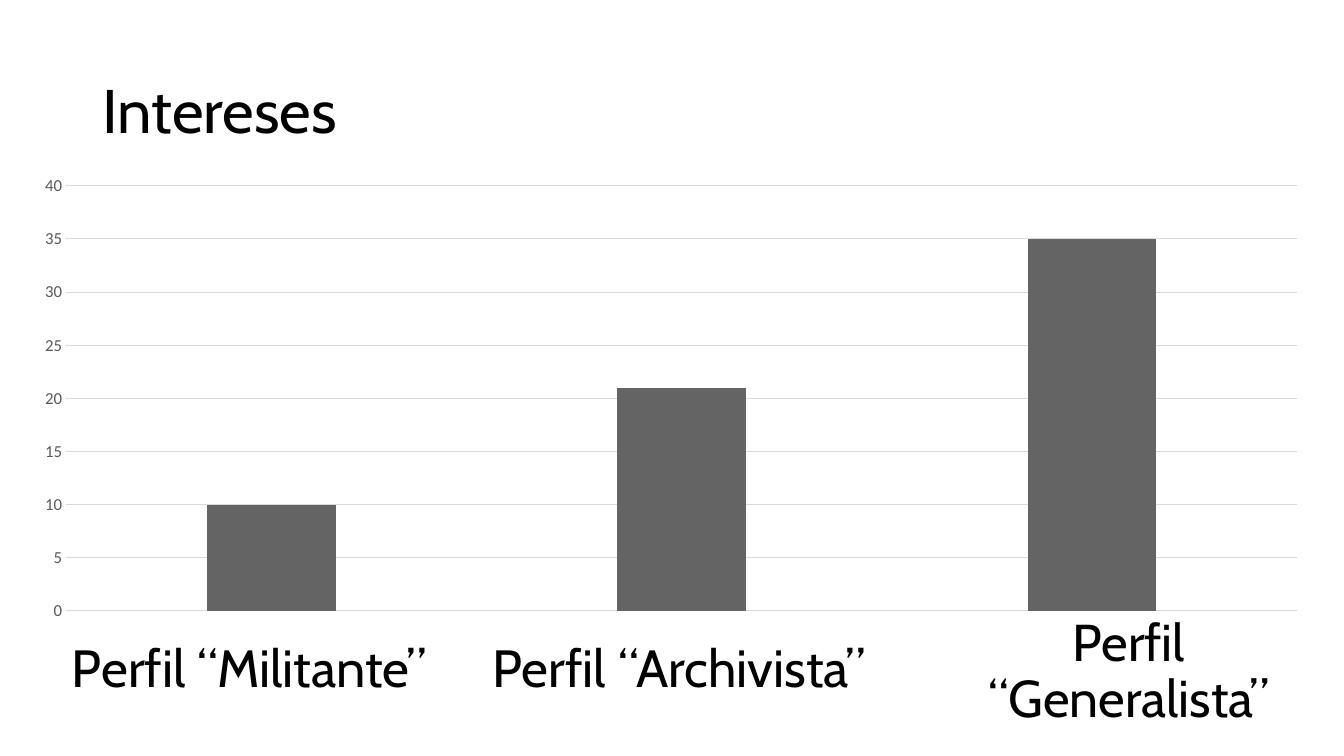
from lxml import etree
from pptx import Presentation
from pptx import util as u
from pptx.chart.data import CategoryChartData
from pptx.dml.color import RGBColor
from pptx.enum import chart as ch, text as t
from pptx.oxml.ns import qn

BLACK = RGBColor(0x00, 0x00, 0x00)
BAR_GRAY = RGBColor(0x64, 0x64, 0x64)
TICK_GRAY = RGBColor(0x59, 0x59, 0x59)
GRID_GRAY = RGBColor(0xD9, 0xD9, 0xD9)
HEADING_FONT, CHART_FONT = "Cabin", "Calibri"

TITLE_BOX = (0.92, 0.4, 11.5, 1.45)
CHART_BOX = (0.19, 1.66, 12.92, 4.6)
LABEL_TOP, LABEL_HEIGHT = 6.26, 0.82
PROFILES = [
    ("Perfil “Militante”", 0.59, 3.76, 37.4, 0.8),
    ("Perfil “Archivista”", 4.71, 4.05, 37.4, 0.8),
    ("Perfil “Generalista”", 9.12, 4.15, 37, 0.9),
]
INTERESTS = (10, 21, 35)
PLOT_SHARES = {"x": 0.036, "y": 0.04, "w": 0.945, "h": 0.917}


def add_heading(slide, box, wording, size, spacing, align):
    """Place one line of heading text, centred vertically in its box."""
    heading = slide.shapes.add_textbox(*map(u.Inches, box))
    frame = heading.text_frame
    frame.word_wrap = True
    frame.vertical_anchor = t.MSO_ANCHOR.MIDDLE
    paragraph = frame.paragraphs[0]
    paragraph.alignment = align
    paragraph.line_spacing = spacing
    run = paragraph.add_run()
    run.text = wording
    run.font.size = u.Pt(size)
    run.font.name = HEADING_FONT
    run.font.color.rgb = BLACK


def fix_plot_area(chart, shares):
    """Pin the inner plot area to the given shares of the chart."""
    plot_area = chart.plots[0]._element.getparent()
    for layout in plot_area.findall(qn("c:layout")):
        plot_area.remove(layout)
    layout = etree.Element(qn("c:layout"))
    plot_area.insert(0, layout)
    manual = etree.SubElement(layout, qn("c:manualLayout"))
    settings = [("layoutTarget", "inner"), ("xMode", "edge"), ("yMode", "edge")]
    for tag, value in settings + list(shares.items()):
        etree.SubElement(manual, qn(f"c:{tag}")).set("val", str(value))


def add_interest_chart(slide, box):
    """Draw the column chart of interests inside the box."""
    interests = CategoryChartData()
    interests.categories = [str(n + 1) for n in range(len(INTERESTS))]
    interests.add_series("Series 1", INTERESTS)
    chart = slide.shapes.add_chart(
        ch.XL_CHART_TYPE.COLUMN_CLUSTERED, *map(u.Inches, box), interests
    ).chart
    chart.has_title = False
    chart.has_legend = False
    chart.font.name = CHART_FONT
    chart.font.size = u.Pt(10)
    chart.font.color.rgb = BLACK

    columns = chart.plots[0]
    columns.gap_width = 219
    columns.overlap = -27
    columns.vary_by_categories = False
    bars = columns.series[0].format
    bars.fill.solid()
    bars.fill.fore_color.rgb = BAR_GRAY
    bars.line.fill.background()

    chart.category_axis.visible = False
    scale = chart.value_axis
    scale.minimum_scale, scale.maximum_scale, scale.major_unit = 0, 40, 5
    scale.major_tick_mark = scale.minor_tick_mark = ch.XL_TICK_MARK.NONE
    scale.format.line.fill.background()
    scale.tick_labels.font.name = CHART_FONT
    scale.tick_labels.font.size = u.Pt(12)
    scale.tick_labels.font.color.rgb = TICK_GRAY
    grid = scale.major_gridlines.format.line
    grid.color.rgb = GRID_GRAY
    grid.width = u.Pt(0.75)
    fix_plot_area(chart, PLOT_SHARES)


def add_profile_labels(slide, top, height):
    """Set the profile names in a row under the columns."""
    for name, left, width, size, spacing in PROFILES:
        box = (left, top, width, height)
        add_heading(slide, box, name, size, spacing, t.PP_ALIGN.CENTER)


def main():
    """Build the slide of interests and save it."""
    deck = Presentation()
    deck.slide_width, deck.slide_height = u.Inches(13.33), u.Inches(7.5)
    slide = deck.slides.add_slide(deck.slide_layouts[6])
    add_heading(slide, TITLE_BOX, "Intereses", 44, 0.9, t.PP_ALIGN.LEFT)
    add_profile_labels(slide, LABEL_TOP, LABEL_HEIGHT)
    add_interest_chart(slide, CHART_BOX)
    deck.save("out.pptx")


if __name__ == "__main__":
    main()
